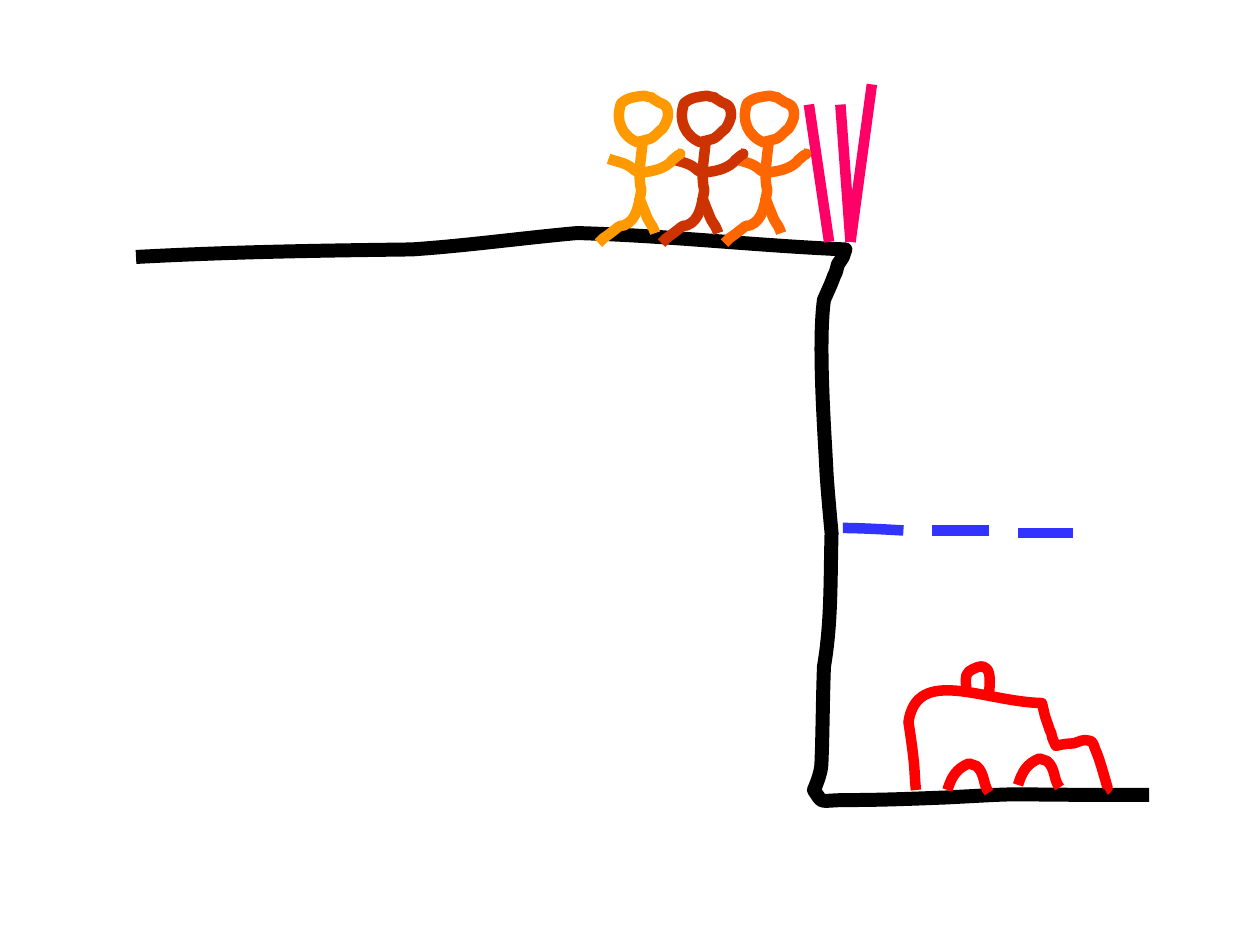
from lxml.etree import SubElement
from pptx import Presentation
from pptx.dml.color import RGBColor
from pptx.enum.shapes import MSO_CONNECTOR
from pptx.oxml.ns import qn
from pptx.util import Cm, Pt

PERSON_SPACING = 0.5

# Each curve is a start point followed by three points per Bezier segment, in inches.
CLIFF = [
    (1.08, 2.04), (1.83, 2), (2.48, 1.99), (3.27, 1.98),
    (3.71, 1.95), (4.14, 1.89), (4.58, 1.85),
    (5.3, 1.87), (6, 1.95), (6.71, 1.98),
    (6.7, 2), (6.7, 2.02), (6.69, 2.04),
    (6.68, 2.06), (6.66, 2.08), (6.65, 2.1),
    (6.64, 2.13), (6.64, 2.16), (6.62, 2.19),
    (6.6, 2.25), (6.57, 2.31), (6.54, 2.38),
    (6.49, 2.74), (6.55, 3.51), (6.56, 3.75),
    (6.57, 3.91), (6.6, 4.23), (6.6, 4.23),
    (6.59, 4.6), (6.6, 4.94), (6.54, 5.29),
    (6.53, 5.55), (6.53, 5.81), (6.52, 6.06),
    (6.52, 6.14), (6.46, 6.27), (6.46, 6.27),
    (6.54, 6.39), (6.49, 6.35), (6.73, 6.35),
    (6.99, 6.35), (7.24, 6.34), (7.5, 6.33),
    (8.28, 6.29), (7.74, 6.31), (9.12, 6.31),
]
CAR_BODY = [
    (7.27, 6.27), (7.26, 6.19), (7.26, 6.1), (7.25, 6.02),
    (7.24, 5.92), (7.21, 5.73), (7.21, 5.73),
    (7.28, 5.28), (7.81, 5.57), (8.27, 5.58),
    (8.3, 5.71), (8.28, 5.64), (8.33, 5.79),
    (8.34, 5.81), (8.35, 5.83), (8.35, 5.85),
    (8.36, 5.88), (8.38, 5.92), (8.38, 5.92),
    (8.42, 5.91), (8.47, 5.9), (8.52, 5.9),
    (8.56, 5.89), (8.6, 5.86), (8.65, 5.88),
    (8.67, 5.88), (8.68, 5.91), (8.69, 5.94),
    (8.73, 6.03), (8.76, 6.15), (8.79, 6.25),
    (8.8, 6.26), (8.78, 6.26), (8.77, 6.27),
]
CAR_LIGHT = [
    (7.67, 5.48), (7.67, 5.43), (7.65, 5.36), (7.69, 5.33),
    (7.9, 5.19), (7.85, 5.45), (7.85, 5.5),
]
CAR_WHEEL = [
    (7.52, 6.27), (7.55, 6.17), (7.59, 6.1), (7.69, 6.06),
    (7.71, 6.07), (7.73, 6.07), (7.75, 6.08),
    (7.82, 6.14), (7.8, 6.23), (7.85, 6.29),
]
HEAD = [
    (5.11, 0.76), (5.04, 0.77), (4.99, 0.77), (4.93, 0.82),
    (4.88, 0.96), (4.94, 1.08), (5.06, 1.13),
    (5.07, 1.12), (5.16, 1.11), (5.18, 1.09),
    (5.21, 1.07), (5.23, 1.04), (5.26, 1.02),
    (5.29, 0.97), (5.32, 0.92), (5.29, 0.85),
    (5.27, 0.82), (5.23, 0.82), (5.21, 0.8),
    (5.12, 0.75), (5.23, 0.79), (5.11, 0.76),
]
BODY_AND_LEG = [
    (5.1, 1.13), (5.09, 1.24), (5.06, 1.4), (5.09, 1.51),
    (5.07, 1.61), (5.06, 1.75), (4.95, 1.79),
    (4.94, 1.79), (4.92, 1.79), (4.91, 1.8),
    (4.91, 1.8), (4.81, 1.88), (4.79, 1.89),
    (4.78, 1.9), (4.75, 1.93), (4.75, 1.93),
]
OTHER_LEG = [
    (5.07, 1.56), (5.09, 1.61), (5.11, 1.66), (5.13, 1.71),
    (5.14, 1.74), (5.16, 1.77), (5.18, 1.8),
    (5.19, 1.82), (5.2, 1.85), (5.2, 1.85),
]
ARMS = [
    (4.83, 1.26), (4.88, 1.28), (4.96, 1.29), (5.01, 1.33),
    (5.06, 1.37), (5.03, 1.35), (5.09, 1.37),
    (5.16, 1.36), (5.25, 1.35), (5.32, 1.29),
    (5.33, 1.28), (5.34, 1.26), (5.36, 1.25),
    (5.39, 1.22), (5.42, 1.22), (5.38, 1.22),
]
WATER_DASHES = [
    [(6.69, 4.19), (6.85, 4.19), (7.17, 4.21), (7.17, 4.21)],
    [(7.4, 4.21), (7.55, 4.21), (7.7, 4.21), (7.85, 4.21)],
    [(8.08, 4.23), (8.23, 4.23), (8.38, 4.23), (8.52, 4.23)],
]
FENCE_POSTS = [
    ((6.75, 1.92), (6.67, 0.83)),
    ((6.75, 1.92), (6.92, 0.67)),
    ((6.58, 1.92), (6.42, 0.83)),
]


def length(inches):
    return Cm(inches * 2.54)


def format_line(line, color, width):
    line.color.rgb = RGBColor.from_string(color)
    line.width = Pt(width)


def bend_segments(shape):
    """Turn every three straight segments of a freeform into one Bezier segment."""
    segments = list(shape._element.iter(qn("a:lnTo")))
    for first in range(0, len(segments), 3):
        curve, *others = segments[first:first + 3]
        curve.tag = qn("a:cubicBezTo")
        for segment in others:
            curve.append(segment[0])
            segment.getparent().remove(segment)


def add_curve(shapes, points, color, width=6, dx=0, dy=0, close=False):
    vertices = [(length(x + dx), length(y + dy)) for x, y in points]
    builder = shapes.build_freeform(*vertices[0])
    builder.add_line_segments(vertices[1:], close=close)
    shape = builder.convert_to_shape()
    bend_segments(shape)
    shape.shadow.inherit = False
    shape.fill.background()
    format_line(shape.line, color, width)


def add_line(shapes, start, end, color, width=6):
    ends = [length(value) for value in (*start, *end)]
    connector = shapes.add_connector(MSO_CONNECTOR.STRAIGHT, *ends)
    format_line(connector.line, color, width)
    SubElement(connector._element.spPr, qn("a:effectLst"))


def add_water(shapes, color):
    group = shapes.add_group_shape()
    for dash in WATER_DASHES:
        add_curve(group.shapes, dash, color)


def add_fence(shapes, color):
    group = shapes.add_group_shape()
    for start, end in FENCE_POSTS:
        add_line(group.shapes, start, end, color)


def add_car(shapes, color):
    group = shapes.add_group_shape()
    for part in (CAR_BODY, CAR_LIGHT, CAR_WHEEL):
        add_curve(group.shapes, part, color)
    add_curve(group.shapes, CAR_WHEEL, color, dx=0.56, dy=-0.04)


def add_person(shapes, color, dx):
    add_curve(shapes, HEAD, color, dx=dx, close=True)
    for part in (BODY_AND_LEG, OTHER_LEG, ARMS):
        add_curve(shapes, part, color, dx=dx)


def add_people(shapes, colors):
    """Add people from right to left, each in front of the one before."""
    group = shapes.add_group_shape()
    for index, color in enumerate(colors):
        dx = (len(colors) - 1 - index) * PERSON_SPACING
        add_person(group.shapes, color, dx)


def main():
    presentation = Presentation()
    presentation.slide_width = Cm(25.4)
    presentation.slide_height = Cm(19.05)
    slide = presentation.slides.add_slide(presentation.slide_layouts[6])
    shapes = slide.shapes

    add_curve(shapes, CLIFF, "000000", width=8)
    add_car(shapes, "FF0000")
    add_water(shapes, "3333FF")
    add_fence(shapes, "FF0066")
    add_people(shapes, ["FF6600", "CC3300", "FF9900"])

    presentation.save("out.pptx")


if __name__ == "__main__":
    main()
